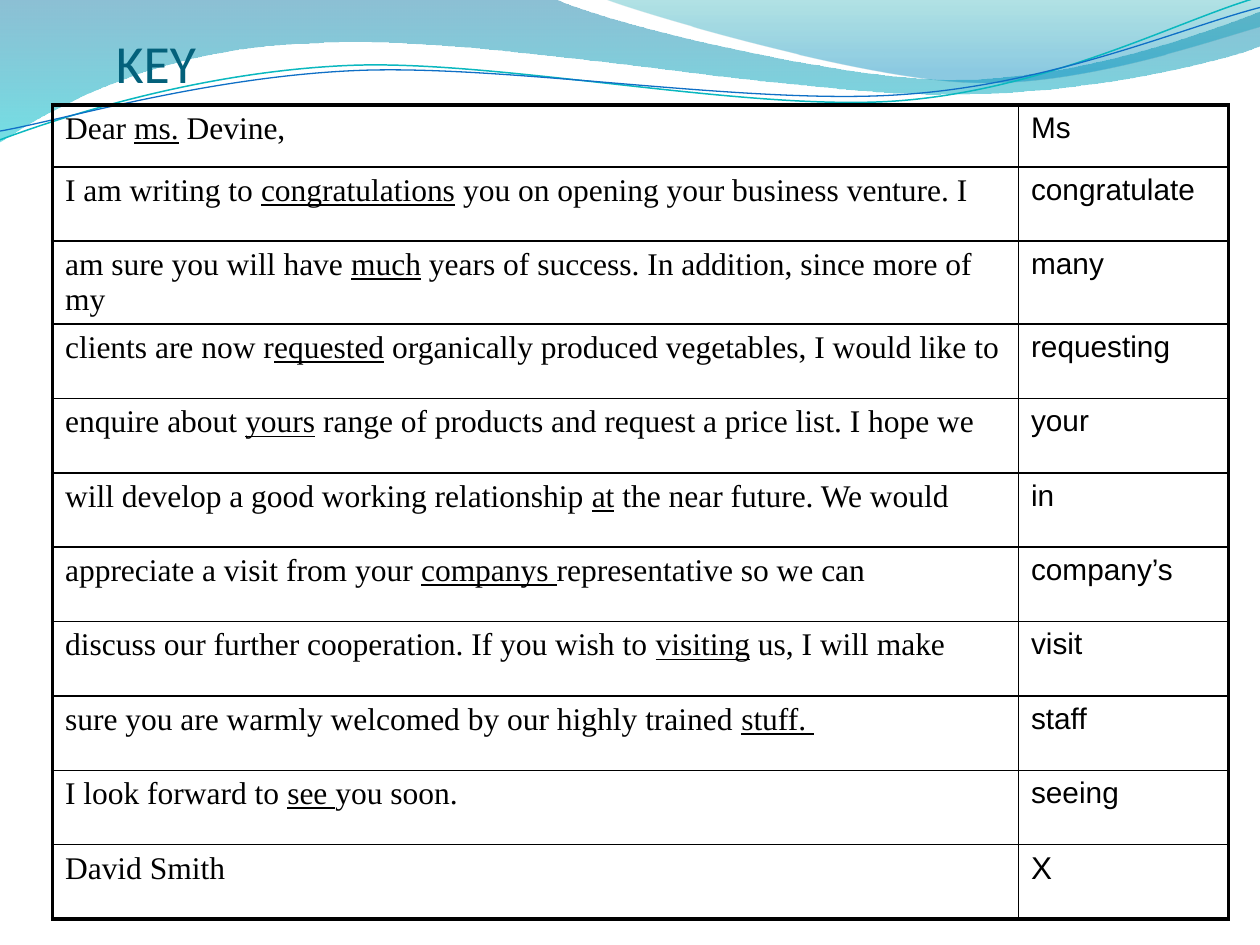
from math import cos, radians, sin
from lxml.etree import SubElement
from pptx import Presentation
from pptx.dml.color import RGBColor
from pptx.enum.text import MSO_ANCHOR
from pptx.oxml.ns import qn
from pptx.util import Pt

# ---- Content ----
TITLE = "KEY"
# (before, underlined mistake, after, correction)
ROWS = [
    ("Dear ", "ms.", " Devine,", "Ms"),
    ("I am writing to ", "congratulations",
     " you on opening your business venture. I", "congratulate"),
    ("am sure you will have ", "much",
     " years of success. In addition, since more of my", "many"),
    ("clients are now r", "equested",
     " organically produced vegetables, I would like to", "requesting"),
    ("enquire about ", "yours",
     " range of products and request a price list. I hope we", "your"),
    ("will develop a good working relationship ", "at",
     " the near future. We would", "in"),
    ("appreciate a visit from your ", "companys ",
     "representative so we can", "company’s"),
    ("discuss our further cooperation. If you wish to ", "visiting",
     " us, I will make", "visit"),
    ("sure you are warmly welcomed by our highly trained ", "stuff. ", "", "staff"),
    ("I look forward to ", "see ", "you soon.", "seeing"),
    ("David Smith", "", "", "X"),
]

THEME = {
    "title": {"name": "Calibri", "size": Pt(30.6), "color": "04617B"},
    "letter": {"name": "Times New Roman", "size": Pt(18), "color": "000000"},
    "answer": {"name": "Arial", "size": Pt(17), "color": "000000"},
    "last_answer": {"name": "Arial", "size": Pt(18), "color": "000000"},
    "border": "000000", "outer": 2.25, "inner": 1,
}

# Gradient stops: (position, colour, opacity in percent)
# Outlines: one point is a straight step, three points are a Bezier curve
WAVES = [
    {"stops": [(0, "0074A1", 45), (1, "00C6CF", 55)],
     "start": (0, 0),
     "steps": [
         [(316.8, -0.7)],
         [(342.7, 12.2), (478.1, 45.4), (545.8, 45.4)],
         [(614.2, 45.4), (689.8, 18.7), (720, 6.5)],
         [(720.7, 25.9)],
         [(709.2, 31.7), (626.4, 54.7), (537.1, 54)],
         [(447.8, 54), (275, 20.2), (185, 24.5)],
         [(92.9, 25.9), (33.1, 59.8), (-0.7, 81.4)],
         [(0, 0)]]},
    {"stops": [(0, "00A1A9", 30), (0.8, "008BBF", 45)],
     "start": (344.9, -0.7),
     "steps": [
         [(366.5, 7.9), (491, 44.6), (553.7, 46.8)],
         [(616.3, 49.7), (691.9, 23), (720, 15.1)],
         [(720, 0)],
         [(344.9, -0.7)]]},
    {"line": ("0AB8BF", 0.85), "center": (359.3, 41.4),
     "start": (0, 79.9),
     "steps": [
         [(34.6, 67), (113.8, 41), (199.4, 37.4)],
         [(284.4, 33.8), (427, 64.1), (513.4, 57.6)],
         [(599.8, 51.1), (675.4, 10.8), (718.6, -1.4)]]},
    {"line": ("0F6FC6", 0.75), "center": (359.6, 42.5),
     "start": (0, 74.9),
     "steps": [
         [(33.8, 69.1), (118.1, 43.9), (203.8, 40.3)],
         [(290.2, 36.7), (429.8, 60.5), (516.2, 54)],
         [(601.9, 48.2), (677.5, 15.1), (720, 4.3)]]},
]

# ---- Layout, in points ----
TABLE_LEFT, TABLE_TOP = 30, 60
COLS = [552, 120]
ROW_HEIGHTS = [35.3, 42.5, 44.6] + [42.5] * (len(ROWS) - 3)
CELL_BOTTOM = 0.6
LINE_TILT = -2.7


def untilt(point, center):
    """Turn a point back by the tilt, so that the shape's rotation restores it."""
    a = radians(-LINE_TILT)
    dx, dy = point[0] - center[0], point[1] - center[1]
    return (center[0] + dx * cos(a) - dy * sin(a),
            center[1] + dx * sin(a) + dy * cos(a))


def bend(sp, steps):
    """Merge each three-point step of the outline into one Bezier segment."""
    path = next(sp.element.iter(qn("a:path")))
    segments = iter(path.findall(qn("a:lnTo")))
    for step in steps:
        parts = [next(segments) for _ in step]
        if len(parts) == 3:
            curve = path.makeelement(qn("a:cubicBezTo"))
            parts[0].addprevious(curve)
            for part in parts:
                curve.append(part[0])
                path.remove(part)


def add_wave(s, wave):
    points = [wave["start"]] + [pt for step in wave["steps"] for pt in step]
    if "center" in wave:
        points = [untilt(pt, wave["center"]) for pt in points]
    start, *rest = [(Pt(x), Pt(y)) for x, y in points]
    builder = s.shapes.build_freeform(*start)
    builder.add_line_segments(rest, close="stops" in wave)
    sp = builder.convert_to_shape()
    bend(sp, wave["steps"])
    sp.shadow.inherit = False
    if "line" in wave:
        color, width = wave["line"]
        sp.rotation = LINE_TILT
        sp.fill.background()
        sp.line.color.rgb = RGBColor.from_string(color)
        sp.line.width = Pt(width)
        return
    sp.line.fill.background()
    sp.fill.gradient()
    sp.fill.gradient_angle = 270
    for stop, (position, color, _) in zip(sp.fill.gradient_stops, wave["stops"]):
        stop.position = position
        stop.color.rgb = RGBColor.from_string(color)
    for clr, (_, _, opacity) in zip(sp.element.iter(qn("a:srgbClr")), wave["stops"]):
        SubElement(clr, qn("a:alpha"), val=str(opacity * 1000))


def add_run(p, text, style, **extra):
    r = p.add_run()
    r.text = text
    for key, value in {**THEME[style], **extra}.items():
        if key == "color":
            r.font.color.rgb = RGBColor.from_string(value)
        else:
            setattr(r.font, key, value)


def set_borders(cell, widths):
    tc_pr = cell._tc.get_or_add_tcPr()
    for side, width in widths.items():
        ln = SubElement(tc_pr, qn(f"a:ln{side}"), w=str(Pt(width)))
        fill = SubElement(ln, qn("a:solidFill"))
        SubElement(fill, qn("a:srgbClr"), val=THEME["border"])


def add_letter_table(s):
    frame = s.shapes.add_table(len(ROWS), len(COLS), Pt(TABLE_LEFT), Pt(TABLE_TOP),
                               Pt(sum(COLS)), Pt(sum(ROW_HEIGHTS)))
    table = frame.table
    table.first_row = table.horz_banding = False
    for col, width in zip(table.columns, COLS):
        col.width = Pt(width)
    outer, inner = THEME["outer"], THEME["inner"]
    last = len(ROWS) - 1
    for i, (before, mistake, after, answer) in enumerate(ROWS):
        table.rows[i].height = Pt(ROW_HEIGHTS[i])
        letter_cell, answer_cell = table.cell(i, 0), table.cell(i, 1)
        p = letter_cell.text_frame.paragraphs[0]
        for text, underline in ((before, False), (mistake, True), (after, False)):
            if text:
                add_run(p, text, "letter", underline=underline)
        add_run(answer_cell.text_frame.paragraphs[0], answer,
                "last_answer" if i == last else "answer")
        for j, cell in enumerate((letter_cell, answer_cell)):
            set_borders(cell, {"L": inner if j else outer,
                               "R": outer if j else inner,
                               "T": inner if i else outer,
                               "B": outer if i == last else inner})
            cell.fill.background()
            cell.margin_bottom = Pt(CELL_BOTTOM)


def main():
    prs = Presentation()
    prs.slide_width, prs.slide_height = Pt(720), Pt(540)
    s = prs.slides.add_slide(prs.slide_layouts[6])

    # Wave decoration
    for wave in WAVES:
        add_wave(s, wave)

    # Title
    tf = s.shapes.add_textbox(Pt(66.2), Pt(23.8), Pt(606.2), Pt(30.2)).text_frame
    for key, value in {"word_wrap": True, "vertical_anchor": MSO_ANCHOR.BOTTOM,
                       "margin_left": 0, "margin_right": 0,
                       "margin_top": Pt(3.6), "margin_bottom": 0}.items():
        setattr(tf, key, value)
    add_run(tf.paragraphs[0], TITLE, "title")

    # Letter with corrections
    add_letter_table(s)
    prs.save("out.pptx")


if __name__ == "__main__":
    main()
